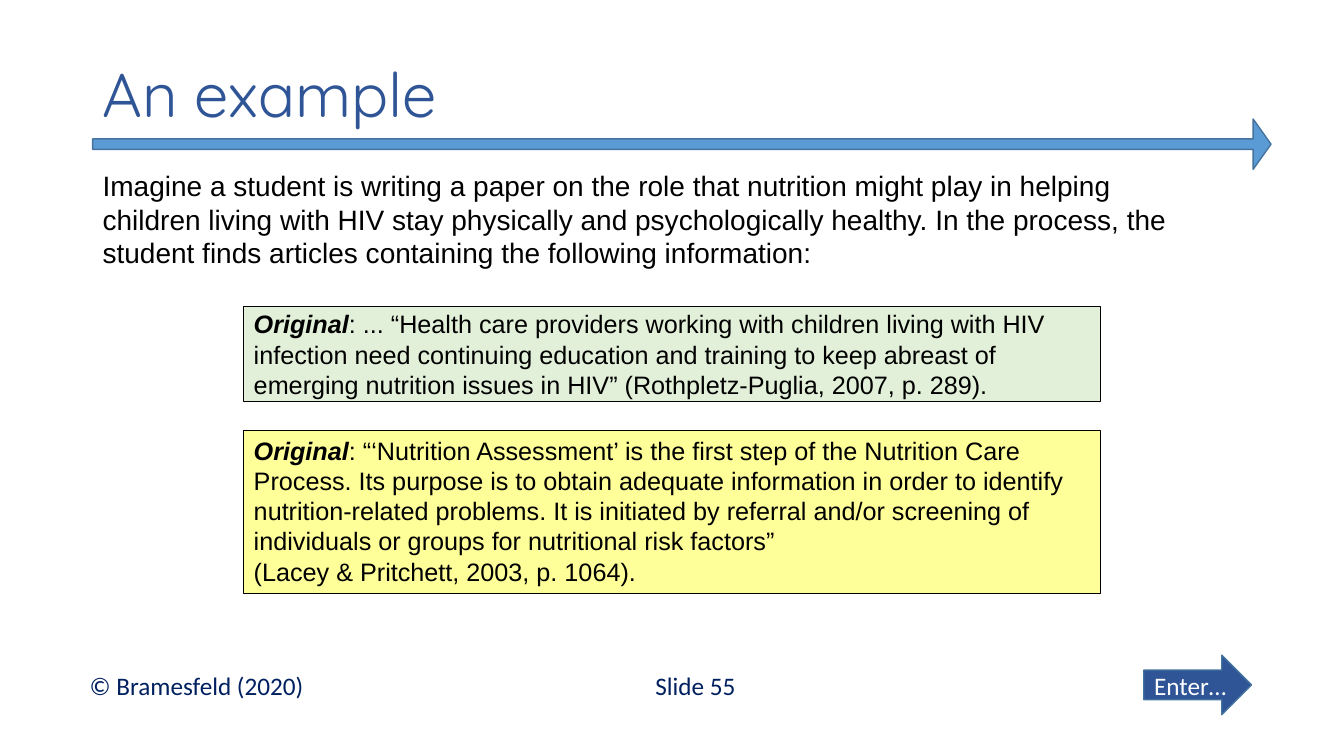
from dataclasses import dataclass
from pptx import Presentation
from pptx.dml.color import RGBColor
from pptx.enum import shapes, text
from pptx.util import Pt


@dataclass(frozen=True)
class Theme:
    navy: str = "002060"
    blue: str = "2F5597"
    sky: str = "5B9BD5"
    edge: str = "43739E"
    green: str = "E2F0D9"
    yellow: str = "FFFF99"
    black: str = "000000"
    white: str = "FFFFFF"
    head: str = "Quicksand"
    body: str = "Arial"
    foot: str = "Calibri"
    title: int = 44
    lead: int = 20
    base: int = 18


T = Theme()
LEFT = text.PP_ALIGN.LEFT
TOP = text.MSO_ANCHOR.TOP
MID = text.MSO_ANCHOR.MIDDLE
RECT = shapes.MSO_SHAPE.RECTANGLE
ARROW = shapes.MSO_SHAPE.RIGHT_ARROW


def write(shape, paras, font, size, color, anchor=TOP, align=LEFT, wrap=True):
    frame = shape.text_frame
    frame.word_wrap = wrap
    frame.vertical_anchor = anchor
    for i, runs in enumerate(paras):
        para = frame.paragraphs[0] if i == 0 else frame.add_paragraph()
        para.alignment = align
        for words, strong in runs:
            run = para.add_run()
            run.text = words
            run.font.name = font
            run.font.size = Pt(size)
            run.font.bold = run.font.italic = strong
            run.font.color.rgb = RGBColor.from_string(color)
    return frame


def label(slide, box, words, *style, **more):
    shape = slide.shapes.add_textbox(*map(Pt, box))
    return write(shape, [[(words, False)]], *style, **more)


def block(slide, kind, box, fill, edge, width):
    shape = slide.shapes.add_shape(kind, *map(Pt, box))
    shape.shadow.inherit = False
    shape.fill.solid()
    shape.fill.fore_color.rgb = RGBColor.from_string(fill)
    shape.line.color.rgb = RGBColor.from_string(edge)
    shape.line.width = Pt(width)
    return shape


def header(slide, box, title):
    x, y, w, h = box
    bar = block(slide, ARROW, (x, y + 56, w, 36), T.sky, T.edge, 1)
    bar.adjustments[0], bar.adjustments[1] = 0.209, 0.355
    frame = label(slide, (x, y, w - 14, h), title, T.head, T.title, T.blue, MID)
    frame.paragraphs[0].line_spacing = 0.9


def quote(slide, box, fill, paras, anchor):
    card = block(slide, RECT, box, fill, T.black, 0.75)
    first, *rest = paras
    lines = [[("Original", True), (first, False)]]
    lines += [[(words, False)] for words in rest]
    write(card, lines, T.body, T.base, T.black, anchor)


def content(slide, box, intro, quotes):
    x, y, w, h = box
    label(slide, (x, y, w, 114), intro, T.body, T.lead, T.black)
    for top, tall, fill, anchor, paras in quotes:
        quote(slide, (x + 108, y + top, 612, tall), fill, paras, anchor)


def footer(slide, box, credit, number, button):
    x, y, w, h = box
    style = T.foot, T.base, T.navy
    label(slide, (x, y + 7, 195, 29), credit, *style)
    label(slide, (x + 404, y + 7, 75.6, 29), number, *style, wrap=False)
    arrow = block(slide, ARROW, (x + w - 77, y, 77, h), T.blue, T.edge, 1)
    write(arrow, [[(button, False)]], T.foot, T.base, T.white, MID,
          text.PP_ALIGN.CENTER, False)


def main():
    deck = Presentation()
    deck.slide_width, deck.slide_height = Pt(960), Pt(540)
    slide = deck.slides.add_slide(deck.slide_layouts[6])
    header(slide, (66.2, 29, 841.7, 82), "An example")
    content(
        slide, (66.2, 116.8, 805.7, 307),
        "Imagine a student is writing a paper on the role that nutrition might "
        "play in helping children living with HIV stay physically and "
        "psychologically healthy. In the process, the student finds articles "
        "containing the following information:",
        [
            (102.2, 67.7, T.green, MID, [
                ": ... “Health care providers working with children living with "
                "HIV infection need continuing education and training to keep "
                "abreast of emerging nutrition issues in HIV” "
                "(Rothpletz-Puglia, 2007, p. 289)."]),
            (190.4, 116.6, T.yellow, TOP, [
                ": “‘Nutrition Assessment’ is the first step of the Nutrition "
                "Care Process. Its purpose is to obtain adequate information in "
                "order to identify nutrition-related problems. It is initiated "
                "by referral and/or screening of individuals or groups for "
                "nutritional risk factors”",
                "(Lacey & Pritchett, 2003, p. 1064)."]),
        ])
    footer(slide, (57, 468, 837, 42.5),
           "© Bramesfeld (2020)", "Slide 55", "Enter…")
    deck.save("out.pptx")


if __name__ == "__main__":
    main()
